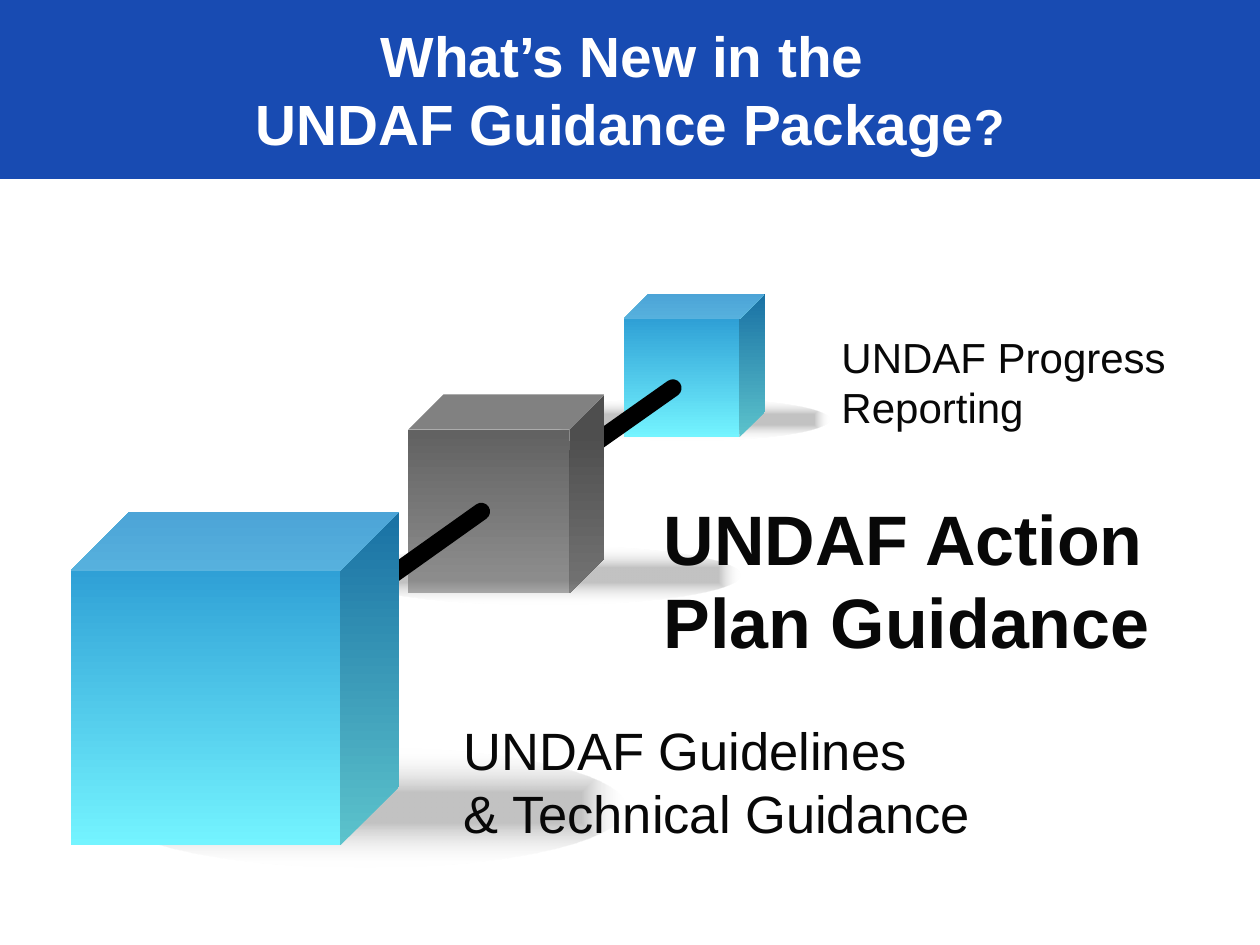
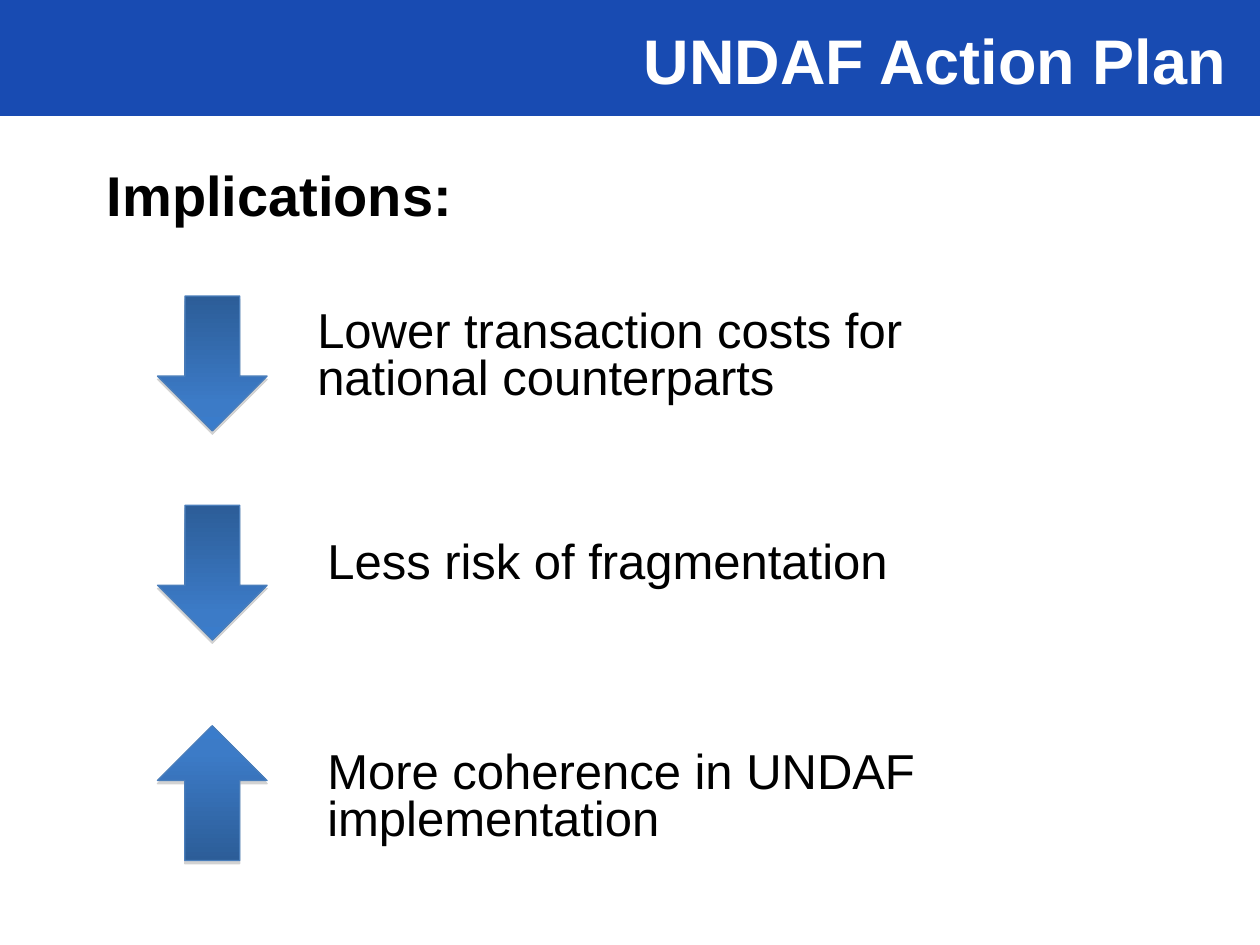
"""Builds two slides on the UNDAF guidance package and its action plan."""
import pptx
import pptx.util
import pptx.dml.color
import pptx.enum.shapes
import pptx.enum.text
import pptx.oxml.ns
import lxml.etree

Inches, Pt = pptx.util.Inches, pptx.util.Pt
RGB = pptx.dml.color.RGBColor.from_string
Kind = pptx.enum.shapes.MSO_SHAPE
Align = pptx.enum.text.PP_ALIGN
Fit = pptx.enum.text.MSO_AUTO_SIZE
qn = pptx.oxml.ns.qn


class Theme:
    font = "Arial"
    band, white, ink, black = "184BB2", "FFFFFF", "080808", "000000"
    edge, shadow = "4A7EBB", "808080"
    sky = dict(stops=[(0, "74F4FF", 100), (100, "208ECD", 100)], angle=270)
    gray = dict(stops=[(19, "626262", 100), (93, "8C8C8C", 100),
                       (100, "A6A6A6", 100)], angle=90)
    blue = dict(stops=[(0, "2C5D98", 100), (80, "3C7BC7", 100),
                       (100, "3A7CCB", 100)], angle=270)
    shade = dict(stops=[(24, "000000", 24), (100, "FFFFFF", 0)])
    title, mark, plan, head, body = 32.4, 28.8, 36, 32, 28
    large, medium, small = 40, 30, 24
    link, rim = 10, 0.75


BLOCKS = [
    dict(shade=(5.29, 2.2, 0.33, 2.26), cube=(4.95, 2.33, 1.12, 1.14),
         paint=Theme.sky, link=(4.32, 3.8, 5.34, 3.08)),
    dict(shade=(4.08, 3, 0.47, 3.13), cube=(3.24, 3.13, 1.56, 1.58),
         paint=Theme.gray, link=(2.4, 5.07, 3.82, 4.06)),
    dict(shade=(2.42, 4.34, 0.95, 4.14), cube=(0.56, 4.06, 2.61, 2.65),
         paint=Theme.sky, link=None),
]
LABELS = [
    ("UNDAF Guidelines \v& Technical Guidance", (3.58, 5.65, 5.17, 1.1),
     Theme.medium, False),
    ("UNDAF Action Plan Guidance", (5.17, 3.88, 4.08, 1.43), Theme.large, True),
    ("UNDAF Progress \vReporting", (6.58, 2.58, 3.42, 0.9), Theme.small, False),
]
POINTS = [
    ("Lower transaction costs for \vnational counterparts", (2.42, 2.42, 7, 1), 2.35, 180),
    ("Less risk of fragmentation", (2.5, 4.25, 7, 0.67), 4.01, 180),
    ("More coherence in UNDAF implementation", (2.5, 5.92, 7, 1), 5.76, 0),
]


def write(frame, text, size, color=Theme.black, bold=False, align=Align.LEFT,
          tail="", before=0, after=0, lines=None, fit=Fit.NONE):
    frame.word_wrap, frame.auto_size = True, fit
    para = frame.paragraphs[0]
    para.text = text
    para.alignment, para.line_spacing = align, lines
    para.space_before, para.space_after = Pt(before), Pt(after)
    if tail:
        para.add_run().text = tail
    for run in para.runs:
        font = run.font
        font.name, font.bold, font.size = Theme.font, bold, Pt(size)
        font.color.rgb = RGB(color)
    if tail:
        para.runs[-1].font.size = Pt(Theme.mark)


def label(slide, box, text, size, **style):
    area = slide.shapes.add_textbox(*map(Inches, box))
    write(area.text_frame, text, size, **style)


def node(parent, tag, **attrs):
    return lxml.etree.SubElement(parent, qn(tag), {k: str(v) for k, v in attrs.items()})


def tint(parent, color, alpha):
    item = node(parent, "a:srgbClr", val=color)
    if alpha < 100:
        node(item, "a:alpha", val=alpha * 1000)


def blend(shape, stops, angle=None):
    shape.fill.background()
    props = shape.element.spPr
    grad = lxml.etree.Element(qn("a:gradFill"), rotWithShape="1")
    group = node(grad, "a:gsLst")
    for place, color, alpha in stops:
        tint(node(group, "a:gs", pos=place * 1000), color, alpha)
    if angle is None:
        route = node(grad, "a:path", path="shape")
        node(route, "a:fillToRect", l=50000, t=50000, r=50000, b=50000)
    else:
        node(grad, "a:lin", ang=angle * 60000, scaled=1)
    props.replace(props.find(qn("a:noFill")), grad)


def form(slide, kind, box, paint, turn=0):
    shape = slide.shapes.add_shape(kind, *map(Inches, box))
    shape.shadow.inherit = False
    shape.line.fill.background()
    shape.rotation = turn
    if isinstance(paint, str):
        shape.fill.solid()
        shape.fill.fore_color.rgb = RGB(paint)
    else:
        blend(shape, **paint)
    return shape


def link(slide, ends):
    line = slide.shapes.add_connector(
        pptx.enum.shapes.MSO_CONNECTOR.STRAIGHT, *map(Inches, ends))
    line.line.width = Pt(Theme.link)
    line.line.color.rgb = RGB(Theme.black)
    props = line.element.spPr
    props.find(qn("a:ln")).set("cap", "rnd")
    node(props, "a:effectLst")


def arrow(slide, top, turn):
    shape = form(slide, Kind.UP_ARROW, (1.25, top, 0.87, 1.07), Theme.blue, turn)
    shape.line.color.rgb = RGB(Theme.edge)
    shape.line.width = Pt(Theme.rim)
    effect = shape.element.spPr.find(qn("a:effectLst"))
    cast = node(effect, "a:outerShdw", dist=Pt(1.8), dir=90 * 60000, rotWithShape=0)
    tint(cast, Theme.shadow, 35)


def start(deck, text, size, box, depth, **style):
    slide = deck.slides.add_slide(deck.slide_layouts[5])
    form(slide, Kind.RECTANGLE, (0, 0, 10, depth), Theme.band)
    title = slide.shapes.title
    title.left, title.top, title.width, title.height = map(Inches, box)
    title.text_frame.vertical_anchor = pptx.enum.text.MSO_ANCHOR.MIDDLE
    write(title.text_frame, text, size, color=Theme.white, bold=True, **style)
    title.element.getparent().append(title.element)
    return slide


def main():
    deck = pptx.Presentation()
    deck.slide_width, deck.slide_height = Inches(10), Inches(7.5)

    news = start(deck, "What’s New in the \vUNDAF Guidance Package", Theme.title,
                 (0.5, 0.08, 9, 1.25), 1.42, align=Align.CENTER, tail="?")
    for block in BLOCKS:
        form(news, Kind.OVAL, block["shade"], Theme.shade, 90)
        cube = form(news, Kind.CUBE, block["cube"], block["paint"])
        cube.adjustments[0] = 0.18
        if block["link"]:
            link(news, block["link"])
    for text, box, size, bold in LABELS:
        label(news, box, text, size, color=Theme.ink, bold=bold,
              before=size * 0.2, fit=Fit.SHAPE_TO_FIT_TEXT)

    plan = start(deck, "UNDAF Action Plan", Theme.plan, (0.83, 0.08, 9, 0.78), 0.92,
                 align=Align.RIGHT)
    label(plan, (0.75, 1.33, 7, 0.67), "Implications:", Theme.head,
          bold=True, lines=0.8, before=Theme.head * 0.2)
    for text, box, top, turn in POINTS:
        arrow(plan, top, turn)
        label(plan, box, text, Theme.body, lines=0.8, before=12, after=6)

    deck.save("out.pptx")


if __name__ == "__main__":
    main()
